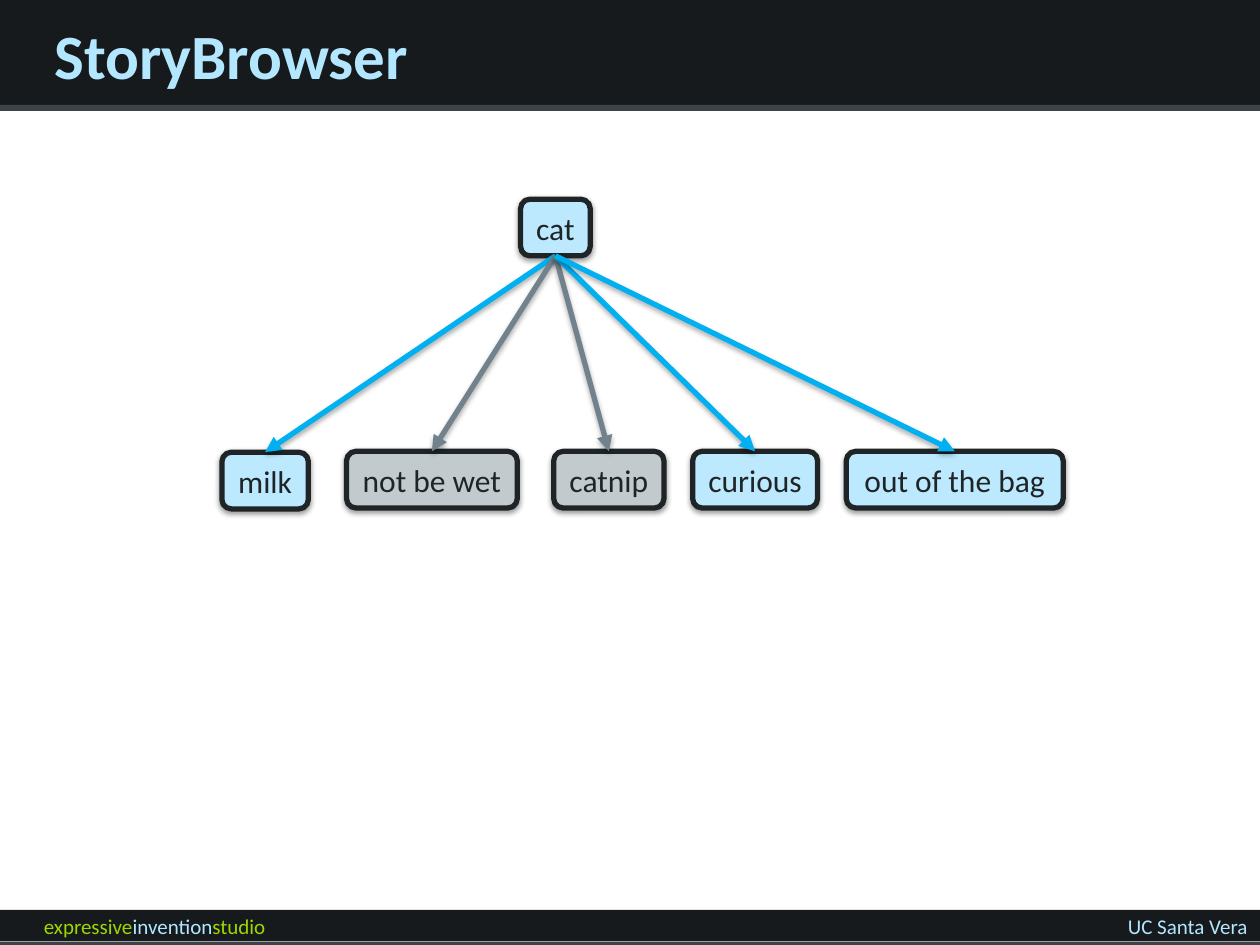
from typing import NamedTuple

from lxml import etree
from pptx import Presentation
from pptx import util as u
from pptx.dml.color import RGBColor
from pptx.enum import shapes, text
from pptx.oxml import ns

FONT = "Calibri"
HUES = {
    "dark": "161A1C", "edge": "3D4449", "ink": "1F2427", "pale": "B3E7FF",
    "lime": "9ED600", "ice": "BDE9FF", "ash": "C2CACE", "blue": "00B0F0",
    "slate": "71828D", "black": "000000",
}
TOP, LOW, HIGH = 113.8, 257.9, 32.4


class Bar(NamedTuple):
    top: float
    high: float
    hue: str


class Node(NamedTuple):
    word: str
    left: float
    top: float
    wide: float
    fill: str
    link: str = ""


class Label(NamedTuple):
    runs: list[tuple[str, str]]
    left: float
    top: float
    wide: float
    high: float
    size: float
    bold: bool = False
    align: text.PP_ALIGN = text.PP_ALIGN.LEFT


BARS = [
    Bar(0, 60, "dark"), Bar(520, 18, "dark"),
    Bar(60, 3.4, "edge"), Bar(538.2, 3.4, "edge"),
]
LABELS = [
    Label([("expressive", "lime"), ("invention", "pale"), ("studio", "lime")],
          18, 518.4, 282, 21.6, 12),
    Label([("UC Santa Vera", "pale")], 480, 518.4, 240, 21.6, 12,
          align=text.PP_ALIGN.RIGHT),
    Label([("StoryBrowser", "pale")], 24, 0, 648, 62.6, 36, bold=True),
]
ROOT = Node("cat", 297.5, TOP, 39.8, "ice")
LEAVES = [
    Node("milk", 126.8, LOW + 0.5, 49.4, "ice", "blue"),
    Node("not be wet", 198, LOW, 97.6, "ash", "slate"),
    Node("catnip", 316.4, LOW, 63, "ash", "slate"),
    Node("curious", 395.8, LOW, 71.4, "ice", "blue"),
    Node("out of the bag", 483.6, LOW, 124, "ice", "blue"),
]


def tone(hue: str) -> RGBColor:
    return RGBColor.from_string(HUES[hue])


def shade(props, dist: float, alpha: int) -> None:
    old = props.find(ns.qn("a:effectLst"))
    if old is not None:
        props.remove(old)
    glow = etree.SubElement(props, ns.qn("a:effectLst"))
    cast = etree.SubElement(
        glow, ns.qn("a:outerShdw"), blurRad=str(u.Pt(3.1)),
        dist=str(u.Pt(dist)), dir="5400000", rotWithShape="0")
    dye = etree.SubElement(cast, ns.qn("a:srgbClr"), val=HUES["black"])
    etree.SubElement(dye, ns.qn("a:alpha"), val=str(alpha * 1000))


def draw_bar(slide, bar: Bar) -> None:
    box = slide.shapes.add_shape(
        shapes.MSO_SHAPE.RECTANGLE, 0, u.Pt(bar.top), u.Pt(720), u.Pt(bar.high))
    box.shadow.inherit = False
    box.fill.solid()
    box.fill.fore_color.rgb = tone(bar.hue)
    box.line.fill.background()


def draw_label(slide, label: Label) -> None:
    box = slide.shapes.add_textbox(
        u.Pt(label.left), u.Pt(label.top), u.Pt(label.wide), u.Pt(label.high))
    frame = box.text_frame
    frame.word_wrap = True
    frame.vertical_anchor = text.MSO_ANCHOR.MIDDLE
    para = frame.paragraphs[0]
    para.alignment = label.align
    para.font.name = FONT
    para.font.size = u.Pt(label.size)
    para.font.bold = label.bold
    for word, hue in label.runs:
        run = para.add_run()
        run.text = word
        run.font.color.rgb = tone(hue)


def draw_node(slide, node: Node):
    box = slide.shapes.add_shape(
        shapes.MSO_SHAPE.FLOWCHART_ALTERNATE_PROCESS,
        u.Pt(node.left), u.Pt(node.top), u.Pt(node.wide), u.Pt(HIGH))
    box.shadow.inherit = False
    box.fill.solid()
    box.fill.fore_color.rgb = tone(node.fill)
    box.line.color.rgb = tone("ink")
    box.line.width = u.Pt(3)
    shade(box.element.spPr, 1.6, 38)
    frame = box.text_frame
    frame.word_wrap = False
    frame.vertical_anchor = text.MSO_ANCHOR.MIDDLE
    para = frame.paragraphs[0]
    para.text = node.word
    para.alignment = text.PP_ALIGN.CENTER
    para.font.name = FONT
    para.font.size = u.Pt(18)
    para.font.color.rgb = tone("ink")
    return box


def draw_link(slide, start, end, hue: str) -> None:
    link = slide.shapes.add_connector(shapes.MSO_CONNECTOR.STRAIGHT, 0, 0, 0, 0)
    link.begin_connect(start, 2)
    link.end_connect(end, 0)
    link.line.color.rgb = tone(hue)
    link.line.width = u.Pt(3)
    props = link.element.spPr
    etree.SubElement(props.find(ns.qn("a:ln")), ns.qn("a:tailEnd"), type="triangle")
    shade(props, 1.8, 35)


def main() -> None:
    deck = Presentation()
    deck.slide_width, deck.slide_height = u.Pt(720), u.Pt(540)
    slide = deck.slides.add_slide(deck.slide_layouts[6])
    for bar in BARS:
        draw_bar(slide, bar)
    for label in LABELS:
        draw_label(slide, label)
    root = draw_node(slide, ROOT)
    boxes = [draw_node(slide, leaf) for leaf in LEAVES]
    for leaf, box in zip(LEAVES, boxes):
        draw_link(slide, root, box, leaf.link)
    deck.save("out.pptx")


if __name__ == "__main__":
    main()
